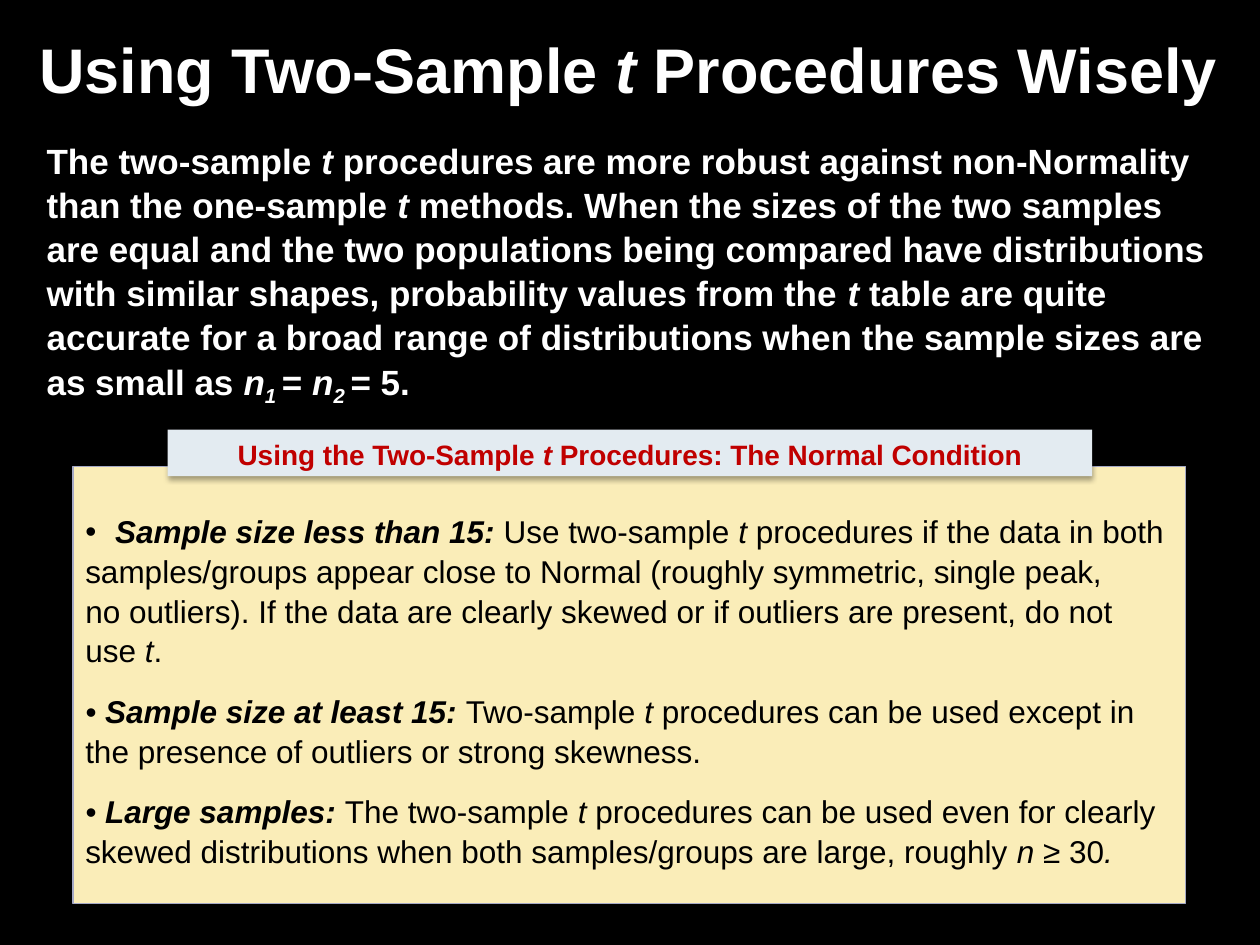
import pptx
import pptx.dml.color
import pptx.enum.shapes
import pptx.enum.text
import pptx.oxml
import pptx.oxml.ns
import pptx.util

Cm, Pt = pptx.util.Cm, pptx.util.Pt
RGB = pptx.dml.color.RGBColor.from_string
ALIGN = pptx.enum.text.PP_ALIGN
ANCHOR = pptx.enum.text.MSO_ANCHOR
RECTANGLE = pptx.enum.shapes.MSO_SHAPE.RECTANGLE
NS = pptx.oxml.ns.nsdecls("a")

COLORS = {
    "background": "000000",
    "light": "FFFFFF",
    "dark": "000000",
    "panel": "FAEDB8",
    "panel_edge": "A5A9C6",
    "banner": "E3EBF1",
    "heading": "C00000",
}


def write(paragraph, runs, size, color, align=ALIGN.LEFT):
    """Add (text, style) runs; style letters are b bold, i italic, s subscript."""
    paragraph.alignment = align
    paragraph.line_spacing = 1.05
    for text, style in runs:
        run = paragraph.add_run()
        run.text = text
        run.font.name = "Arial"
        run.font.size = Pt(size)
        run.font.color.rgb = RGB(COLORS[color])
        run.font.bold = "b" in style
        run.font.italic = "i" in style
        if "s" in style:
            run.font._element.set("baseline", "-25000")


def add_card(left, top, width, height, fill, opacity):
    """Add a filled rectangle with a soft shadow straight below it."""
    card = slide.shapes.add_shape(RECTANGLE, Cm(left), Cm(top), Cm(width), Cm(height))
    card.shadow.inherit = False
    card.fill.solid()
    card.fill.fore_color.rgb = RGB(COLORS[fill])
    card.line.fill.background()
    effects = card._element.spPr.find(pptx.oxml.ns.qn("a:effectLst"))
    effects.append(pptx.oxml.parse_xml(
        f'<a:outerShdw {NS} blurRad="{Pt(3.1)}" dist="{Pt(1.7)}" dir="5400000" rotWithShape="0">'
        f'<a:srgbClr val="000000"><a:alpha val="{opacity * 1000}"/></a:srgbClr></a:outerShdw>'))
    card.text_frame.word_wrap = True
    card.text_frame.vertical_anchor = ANCHOR.TOP
    return card


deck = pptx.Presentation()
deck.slide_width, deck.slide_height = Cm(25.4), Cm(19.05)
slide = deck.slides.add_slide(deck.slide_layouts[6])
slide.background.fill.solid()
slide.background.fill.fore_color.rgb = RGB(COLORS["background"])

# Title and introduction
title_runs = [("Using Two-Sample ", "b"), ("t", "bi"), (" Procedures Wisely", "b")]
intro_runs = [
    ("The two-sample ", "b"), ("t ", "bi"),
    ("procedures are more robust against non-Normality than the one-sample ", "b"),
    ("t ", "bi"),
    ("methods. When the sizes of the two samples are equal and the two populations "
     "being compared have distributions with similar shapes, probability values from the ", "b"),
    ("t ", "bi"),
    ("table are quite accurate for a broad range of distributions when the sample "
     "sizes are as small as ", "b"),
    ("n", "bi"), ("1 ", "bis"), ("= ", "b"), ("n", "bi"), ("2 ", "bis"), ("= 5.", "b"),
]
for box, runs, size, align, anchor in [
    ((0.28, 0.13, 24.77, 2.41), title_runs, 36, ALIGN.CENTER, ANCHOR.MIDDLE),
    ((0.69, 2.64, 23.93, 5.72), intro_runs, 20, ALIGN.LEFT, ANCHOR.TOP),
]:
    frame = slide.shapes.add_textbox(*map(Cm, box)).text_frame
    frame.word_wrap = True
    frame.vertical_anchor = anchor
    write(frame.paragraphs[0], runs, size, "light", align)

# Conditions by sample size: (space after, runs)
conditions = [
    (0, [("Sample size less than 15: ", "bi"), ("Use two-sample ", ""), ("t ", "i"),
         ("procedures if the data in both", "")]),
    (0, [("samples/groups appear close to Normal (roughly symmetric, single peak,", "")]),
    (0, [("no outliers). If the data are clearly skewed or if outliers are present, do not", "")]),
    (12, [("use ", ""), ("t", "i"), (".", "")]),
    (12, [("• ", "i"), ("Sample size at least 15: ", "bi"), ("Two-sample ", ""), ("t ", "i"),
          ("procedures can be used except in the presence of outliers or strong skewness.", "")]),
    (0, [("• ", "i"), ("Large samples: ", "bi"), ("The two-sample ", ""), ("t ", "i"),
         ("procedures can be used even for clearly", "")]),
    (0, [("skewed distributions when both samples/groups are large, roughly ", ""),
         ("n ≥ ", "i"), ("30", ""), (".", "i")]),
]
panel = add_card(1.47, 9.4, 22.43, 8.81, "panel", 38)
panel.line.color.rgb = RGB(COLORS["panel_edge"])
panel.line.width = Pt(0.75)
panel.text_frame.margin_top = Cm(0.89)
for index, (space_after, runs) in enumerate(conditions):
    if index == 0:
        paragraph = panel.text_frame.paragraphs[0]
        properties = paragraph._p.get_or_add_pPr()
        properties.set("marL", str(Cm(0.6)))
        properties.set("indent", str(-Cm(0.6)))
        properties.append(pptx.oxml.parse_xml(f'<a:buFont {NS} typeface="Arial"/>'))
        properties.append(pptx.oxml.parse_xml(f'<a:buChar {NS} char="•"/>'))
    else:
        paragraph = panel.text_frame.add_paragraph()
    write(paragraph, runs, 18, "dark")
    paragraph.space_after = Pt(space_after)

# Heading banner over the panel's top edge
banner = add_card(3.38, 8.66, 18.64, 0.94, "banner", 35)
write(banner.text_frame.paragraphs[0],
      [("Using the Two-Sample ", "b"), ("t ", "bi"),
       ("Procedures: The Normal Condition", "b")],
      16, "heading", ALIGN.CENTER)

deck.save("out.pptx")
